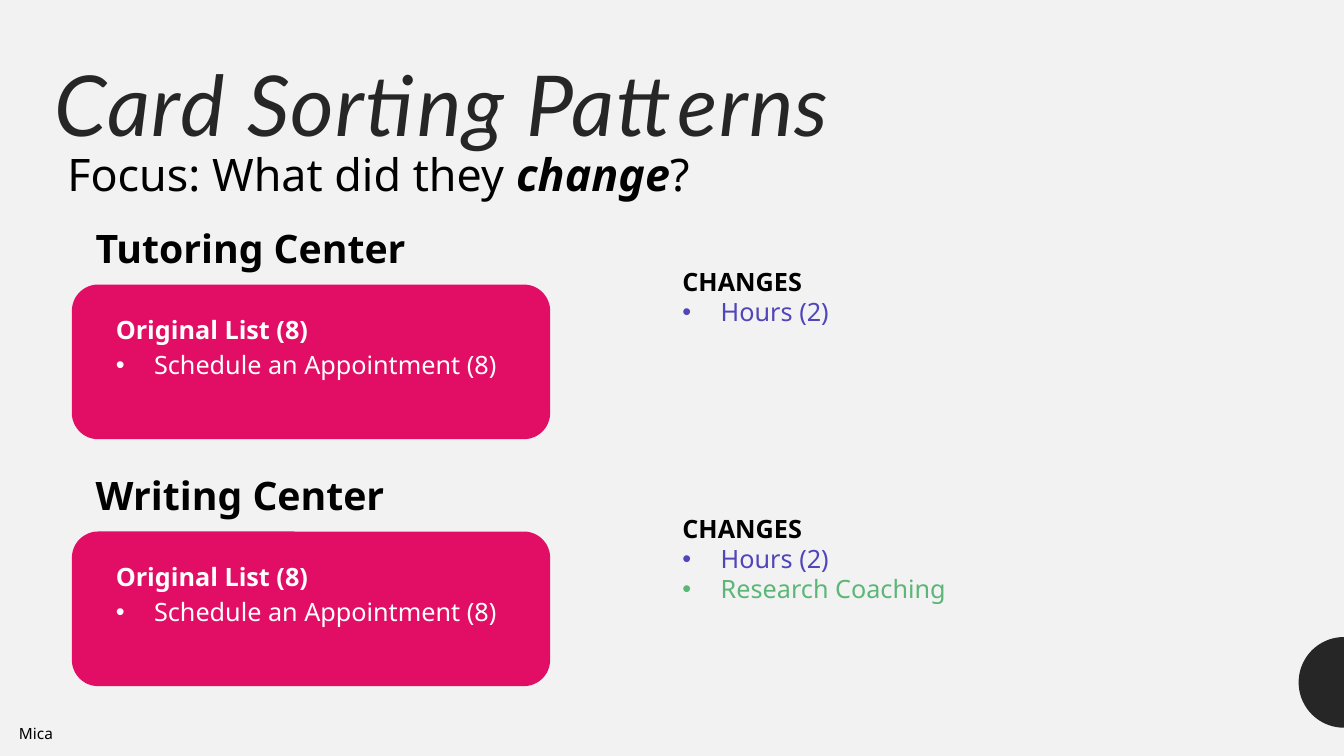
"""Builds the card sorting patterns slide."""
from math import cos, pi, sin

from lxml.etree import SubElement
from pptx import Presentation
from pptx.dml.color import RGBColor
from pptx.enum.shapes import MSO_SHAPE as Shape
from pptx.enum.text import MSO_ANCHOR as Anchor, MSO_AUTO_SIZE as AutoSize, PP_ALIGN as Align
from pptx.oxml.ns import qn
from pptx.util import Inches, Pt

WIDTH, HEIGHT = 13.33, 7.5
BLACK, WHITE, DARK, PAPER = "000000", "FFFFFF", "262626", "F2F2F2"
PINK, PURPLE, GREEN = "E20E65", "5046B9", "5CB678"

TITLE = "Card Sorting Patterns"
FOCUS = [("Focus: What did they ", ""), ("change", "bi"), ("?", "")]
CARD = ("Original List (8)", [("Schedule an Appointment (8)", WHITE)])
CENTERS = [
    ("Tutoring Center", [("Hours (2)", PURPLE)]),
    ("Writing Center", [("Hours (2)", PURPLE), ("Research Coaching", GREEN)]),
]
AUTHOR = "Mica"

FIRST_ROW, ROW_STEP = 2.18, 2.45
LINE_HEIGHT, INDENT = 0.31, 0.38


def color(value):
    return RGBColor.from_string(value)


def add_run(paragraph, text, size, fill=BLACK, style="", font="Noto Sans"):
    run = paragraph.add_run()
    run.text = text
    run.font.name, run.font.size = font, Pt(size)
    run.font.bold, run.font.italic = "b" in style, "i" in style
    run.font.color.rgb = color(fill)
    return run


def add_box(slide, left, top, width, height):
    box = slide.shapes.add_textbox(*map(Inches, (left, top, width, height)))
    box.text_frame.word_wrap = True
    box.text_frame.auto_size = AutoSize.SHAPE_TO_FIT_TEXT
    return box.text_frame


def add_list(slide, bounds, heading, heading_color, items, spacing=None):
    frame = add_box(slide, *bounds)
    add_run(frame.paragraphs[0], heading, 18, heading_color, "b")
    for text, fill in items:
        paragraph = frame.add_paragraph()
        properties = paragraph._p.get_or_add_pPr()
        properties.set("marL", str(Inches(INDENT)))
        properties.set("indent", str(-Inches(INDENT)))
        SubElement(properties, qn("a:buFont")).set("typeface", "Arial")
        SubElement(properties, qn("a:buChar")).set("char", "•")
        if spacing:
            paragraph.line_spacing = spacing
        add_run(paragraph, text, 18, fill)


def add_half_disc(slide, center_y, radius, steps=36):
    angles = [pi / 2 + pi * step / steps for step in range(steps + 1)]
    points = [(Inches(WIDTH + radius * cos(angle)), Inches(center_y - radius * sin(angle)))
              for angle in angles]
    builder = slide.shapes.build_freeform(*points[0])
    builder.add_line_segments(points[1:], close=True)
    disc = builder.convert_to_shape()
    disc.shadow.inherit = False
    disc.fill.solid()
    disc.fill.fore_color.rgb = color(DARK)
    disc.line.fill.background()


def add_title(slide):
    title = slide.shapes.title
    title.left, title.top, title.width, title.height = map(Inches, (0.44, 0.58, 12.04, 1.37))
    frame = title.text_frame
    frame.word_wrap, frame.auto_size = True, AutoSize.NONE
    frame.vertical_anchor = Anchor.TOP
    paragraph = frame.paragraphs[0]
    paragraph.alignment, paragraph.line_spacing = Align.LEFT, 0.9
    run = add_run(paragraph, TITLE, 60, DARK, "i", "Lato")
    run.font._element.set("spc", "100")


def add_center(slide, top, name, changes):
    card = slide.shapes.add_shape(
        Shape.ROUNDED_RECTANGLE, *map(Inches, (0.72, top + 0.65, 4.73, 1.52)))
    card.shadow.inherit = False
    card.fill.solid()
    card.fill.fore_color.rgb = card.line.color.rgb = color(PINK)
    card.line.width = Pt(1)
    heading, items = CARD
    add_list(slide, (1.05, top + 0.89, 4.23, 1.52), heading, WHITE, items, 1.16)
    add_run(add_box(slide, 0.85, top, 6.32, 0.57).paragraphs[0], name, 28, style="b")
    height = 1.16 + LINE_HEIGHT * len(changes)
    add_list(slide, (6.67, top + 0.41, 4.41, height), "CHANGES", BLACK, changes)


def main():
    presentation = Presentation()
    presentation.slide_width, presentation.slide_height = Inches(WIDTH), Inches(HEIGHT)
    slide = presentation.slides.add_slide(presentation.slide_layouts[5])
    slide.background.fill.solid()
    slide.background.fill.fore_color.rgb = color(PAPER)
    add_half_disc(slide, 6.77, 0.45)
    add_title(slide)
    focus = add_box(slide, 0.57, 1.41, 11.24, 1.18).paragraphs[0]
    for text, style in FOCUS:
        add_run(focus, text, 32, style=style)
    for row, (name, changes) in enumerate(CENTERS):
        add_center(slide, FIRST_ROW + row * ROW_STEP, name, changes)
    add_run(add_box(slide, 0.09, 7.13, 0.6, 0.29).paragraphs[0], AUTHOR, 11)
    presentation.save("out.pptx")


if __name__ == "__main__":
    main()
